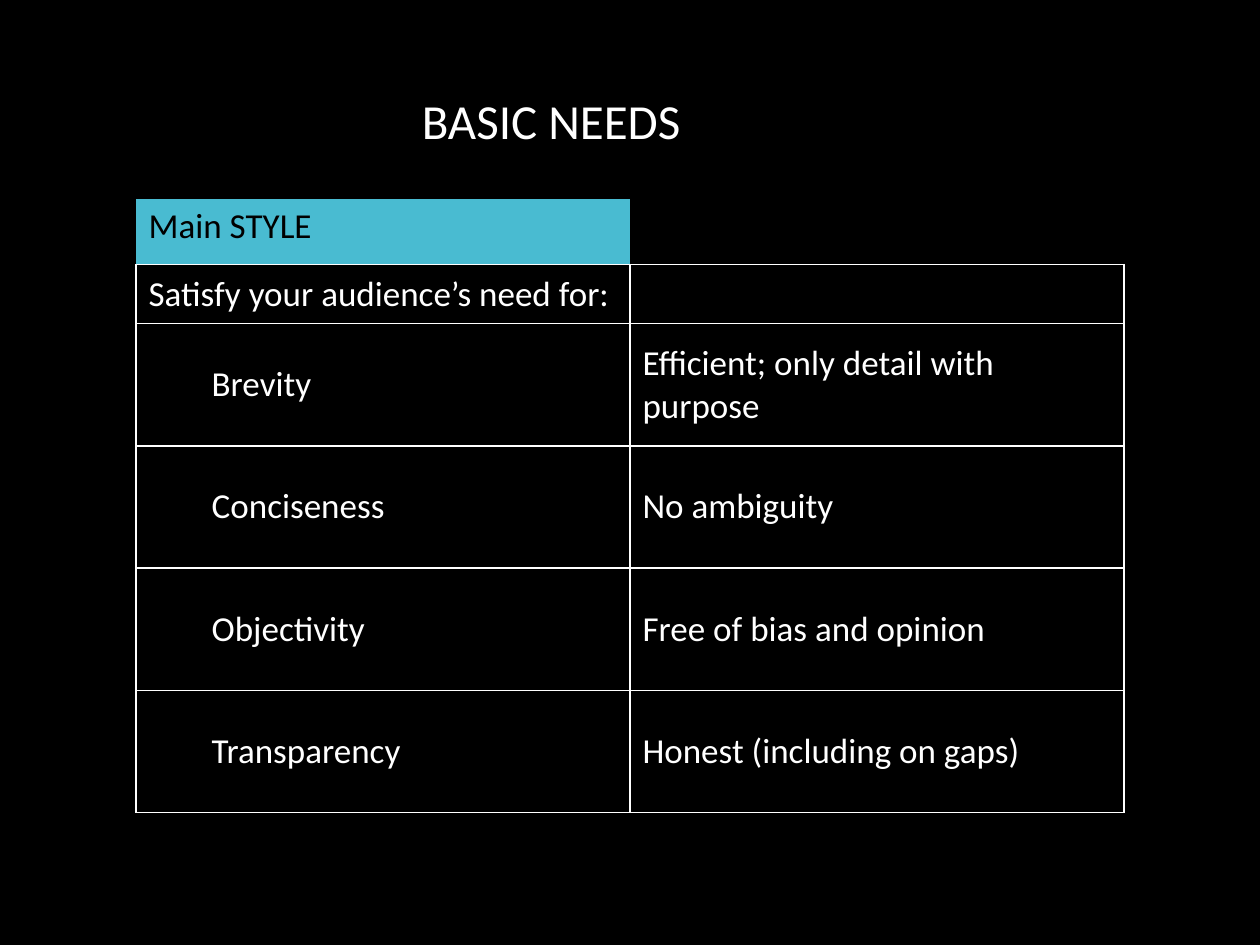
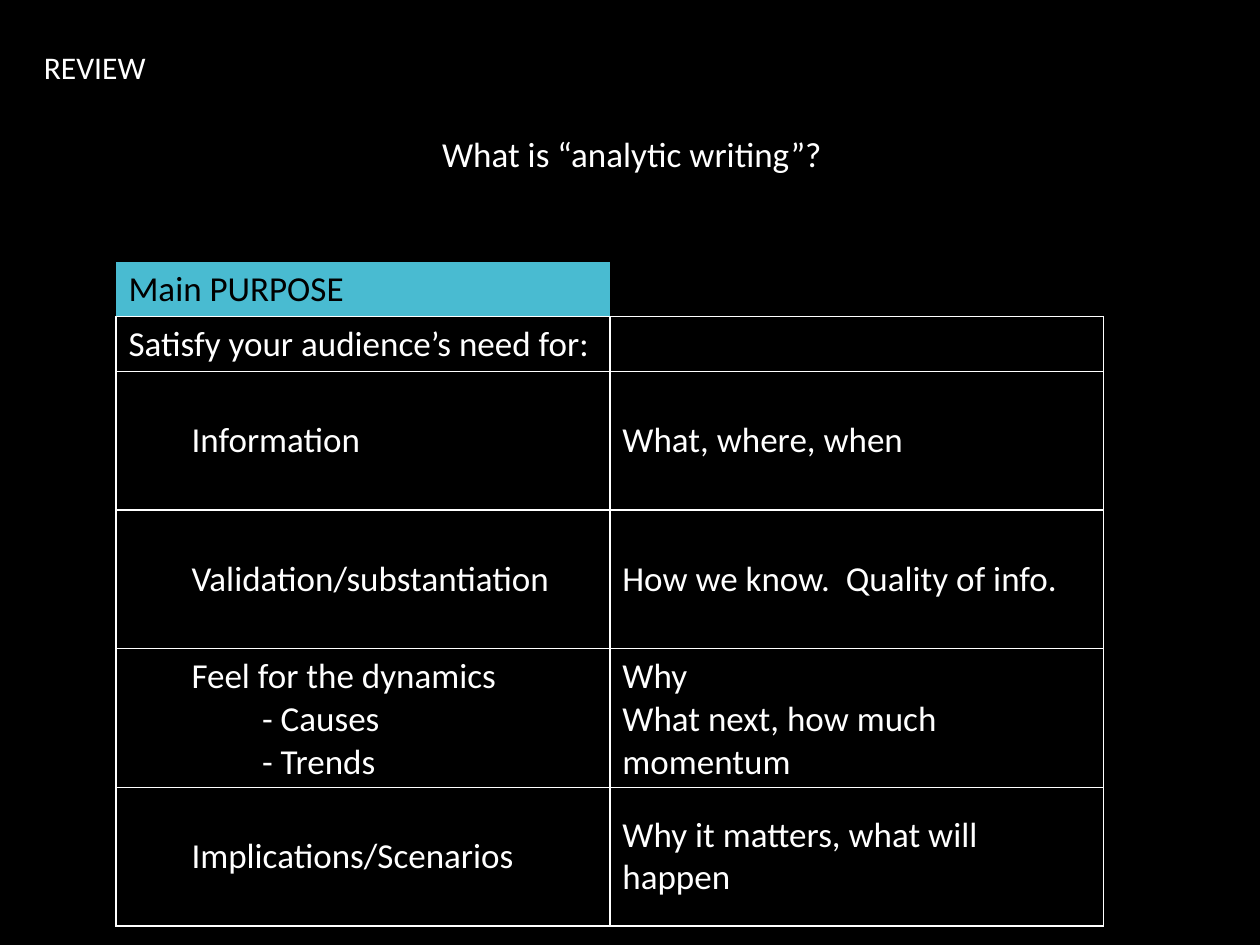
from dataclasses import dataclass

from lxml.etree import SubElement
from pptx import Presentation
from pptx.dml.color import RGBColor
from pptx.enum.text import MSO_ANCHOR, MSO_AUTO_SIZE
from pptx.oxml.ns import qn
from pptx.slide import Slide
from pptx.table import _Cell as Cell
from pptx.text.text import _Paragraph as Paragraph
from pptx.util import Inches, Length, Pt

BLACK = RGBColor(0x00, 0x00, 0x00)
WHITE = RGBColor(0xFF, 0xFF, 0xFF)
TEAL = RGBColor(0x49, 0xBB, 0xD1)
FONT = "Calibri"
TABLE_SIZE = 20
COL_W = Inches(3.92)
NEED_INDENT = Inches(0.5)
DETAIL_INDENT = Inches(1.06)
NO_INDENT = Inches(0)
SUBTITLE = "Satisfy your audience’s need for:"


@dataclass(frozen=True)
class Label:
    """A one-line heading that sizes to its text."""
    text: str
    size: int
    left: float
    top: float
    width: float
    height: float


@dataclass(frozen=True)
class Need:
    """An audience need, its sub-points and what satisfies it."""
    name: str
    answers: tuple[str, ...]
    details: tuple[str, ...] = ()


@dataclass(frozen=True)
class NeedsTable:
    """A table of needs under a coloured header cell."""
    title: str
    left: float
    top: float
    title_h: float
    subtitle_h: float
    need_h: float
    needs: tuple[Need, ...]


@dataclass(frozen=True)
class Page:
    """The headings and the table of one slide."""
    labels: tuple[Label, ...]
    table: NeedsTable


PAGES = (
    Page(
        (Label("BASIC NEEDS", 28, 3.25, 0.67, 2.57, 0.57),),
        NeedsTable("Main STYLE", 1.08, 1.58, 0.52, 0.47, 0.97, (
            Need("Brevity", ("Efficient; only detail with purpose",)),
            Need("Conciseness", ("No ambiguity",)),
            Need("Objectivity", ("Free of bias and opinion",)),
            Need("Transparency", ("Honest (including on gaps)",)),
        )),
    ),
    Page(
        (
            Label("REVIEW", 18, 0.25, 0.33, 1.02, 0.4),
            Label("What is “analytic writing”?", 20, 3.41, 1, 3.25, 0.44),
        ),
        NeedsTable("Main PURPOSE", 0.92, 2.08, 0.41, 0.41, 1.1, (
            Need("Information", ("What, where, when",)),
            Need("Validation/substantiation", ("How we know.  Quality of info.",)),
            Need("Feel for the dynamics", ("Why", "What next, how much momentum"),
                 ("- Causes", "- Trends")),
            Need("Implications/Scenarios", ("Why it matters, what will happen",)),
        )),
    ),
)


def add_run(p: Paragraph, text: str, size: int, color: RGBColor) -> None:
    """Add one styled run to a paragraph."""
    r = p.add_run()
    r.text = text
    r.font.name = FONT
    r.font.size = Pt(size)
    r.font.color.rgb = color


def add_label(s: Slide, label: Label) -> None:
    """Draw a heading."""
    sp = s.shapes.add_textbox(Inches(label.left), Inches(label.top),
                              Inches(label.width), Inches(label.height))
    tf = sp.text_frame
    tf.word_wrap = False
    tf.auto_size = MSO_AUTO_SIZE.SHAPE_TO_FIT_TEXT
    add_run(tf.paragraphs[0], label.text, label.size, WHITE)


def set_borders(cell: Cell, drawn: str) -> None:
    """Draw the named sides (L, R, T, B) in white and clear the others."""
    tc_pr = cell._tc.get_or_add_tcPr()
    for side in "LRTB":
        ln = SubElement(tc_pr, qn(f"a:ln{side}"), w=str(Pt(1)))
        if side in drawn:
            fill = SubElement(ln, qn("a:solidFill"))
            SubElement(fill, qn("a:srgbClr"), val=str(WHITE))
        else:
            SubElement(ln, qn("a:noFill"))


def write_cell(cell: Cell, lines: list[tuple[str, Length]], color: RGBColor = WHITE) -> None:
    """Write each line as a paragraph with its own indent."""
    tf = cell.text_frame
    for i, (text, indent) in enumerate(lines):
        p = tf.add_paragraph() if i else tf.paragraphs[0]
        if indent:
            p_pr = p._p.get_or_add_pPr()
            p_pr.set("marL", str(indent))
            p_pr.set("indent", "0")
        add_run(p, text, TABLE_SIZE, color)


def add_needs_table(s: Slide, spec: NeedsTable) -> None:
    """Draw a table of needs."""
    heights = [spec.title_h, spec.subtitle_h] + [spec.need_h] * len(spec.needs)
    table = s.shapes.add_table(len(heights), 2, Inches(spec.left), Inches(spec.top),
                               COL_W * 2, Inches(sum(heights))).table
    table.first_row = False
    table.horz_banding = False
    for col in table.columns:
        col.width = COL_W
    for i, (row, height) in enumerate(zip(table.rows, heights)):
        row.height = Inches(height)
        for cell in row.cells:
            set_borders(cell, "LRTB" if i else "B")
            cell.fill.background()
            cell.vertical_anchor = MSO_ANCHOR.MIDDLE if i else MSO_ANCHOR.TOP

    header = table.cell(0, 0)
    header.fill.solid()
    header.fill.fore_color.rgb = TEAL
    write_cell(header, [(spec.title, NO_INDENT)], BLACK)
    write_cell(table.cell(1, 0), [(SUBTITLE, NO_INDENT)])
    for i, need in enumerate(spec.needs, start=2):
        details = [(text, DETAIL_INDENT) for text in need.details]
        write_cell(table.cell(i, 0), [(need.name, NEED_INDENT)] + details)
        write_cell(table.cell(i, 1), [(text, NO_INDENT) for text in need.answers])


def main() -> None:
    """Build the slides and save them."""
    prs = Presentation()
    prs.slide_width, prs.slide_height = Inches(10), Inches(7.5)
    background = prs.slide_master.background.fill
    background.solid()
    background.fore_color.rgb = BLACK
    for page in PAGES:
        s = prs.slides.add_slide(prs.slide_layouts[6])
        for label in page.labels:
            add_label(s, label)
        add_needs_table(s, page.table)
    prs.save("out.pptx")


if __name__ == "__main__":
    main()
